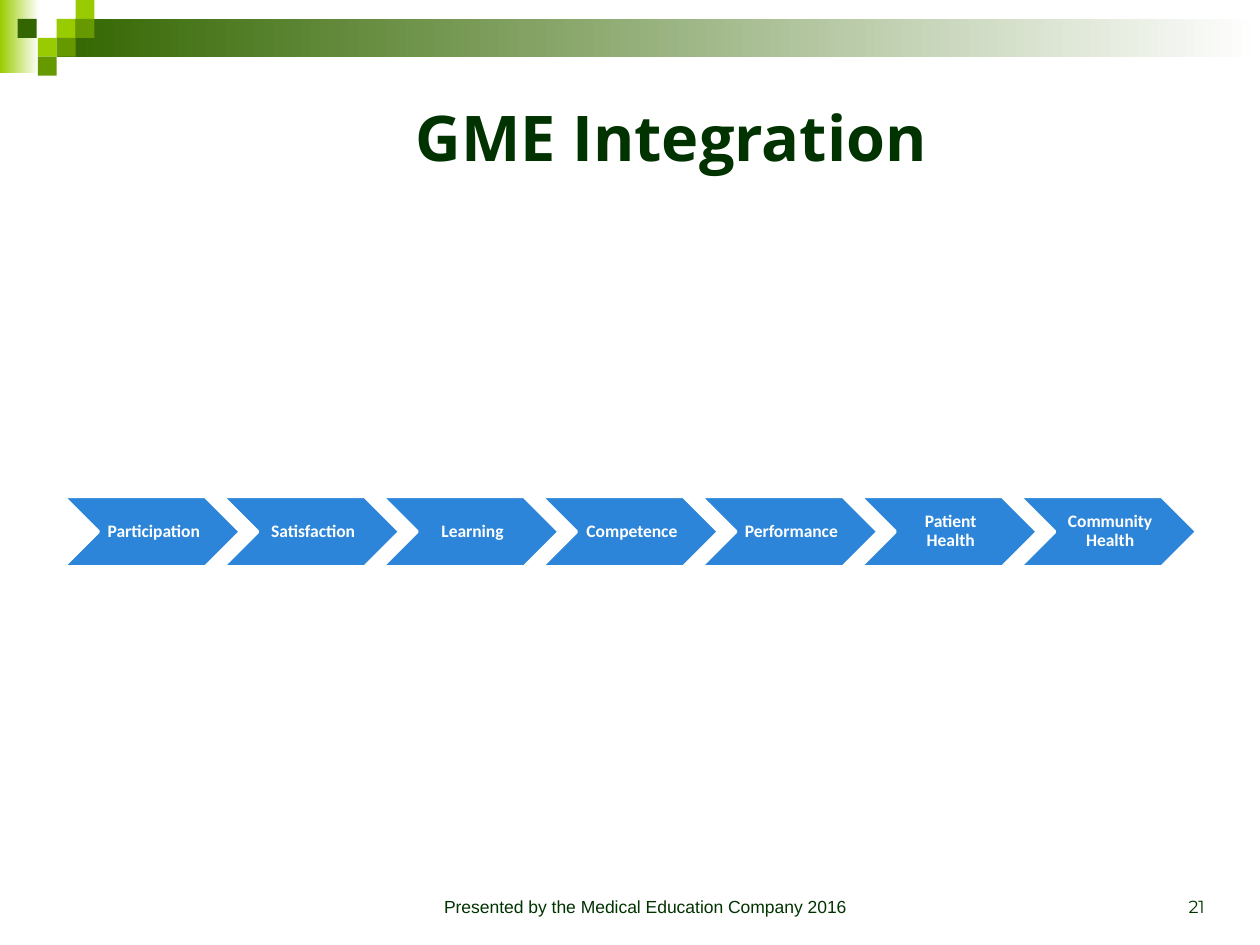
import pptx
import pptx.util
import pptx.dml.color
import pptx.enum.shapes
import pptx.enum.text

Inches = pptx.util.Inches
Pt = pptx.util.Pt
SHAPE = pptx.enum.shapes.MSO_SHAPE
ANCHOR = pptx.enum.text.MSO_ANCHOR
ALIGN = pptx.enum.text.PP_ALIGN

DARK_GREEN = "003300"
WHITE = "FFFFFF"
STAGES = ["Participation", "Satisfaction", "Learning", "Competence",
          "Performance", "Patient Health", "Community Health"]
TILE = 0.15
TILES = [(0.45, 0.15, "99CC00"), (0.6, 0, "99CC00"), (0.6, 0.15, "669900"),
         (0.3, 0.3, "99CC00"), (0.14, 0.15, "336600"),
         (0.45, 0.3, "669900"), (0.3, 0.45, "669900")]


def rgb(value):
    return pptx.dml.color.RGBColor.from_string(value)


def set_all(target, values):
    for key, value in values.items():
        setattr(target, key, value)


def write(shape, text, size, font, color, align, anchor, bold=False):
    set_all(shape.text_frame, {"word_wrap": True, "vertical_anchor": anchor})
    paragraph = shape.text_frame.paragraphs[0]
    paragraph.alignment = align
    run = paragraph.add_run()
    run.text = text
    set_all(run.font, {"size": Pt(size), "name": font, "bold": bold})
    run.font.color.rgb = rgb(color)
    return paragraph


def add_block(slide, preset, box, color):
    block = slide.shapes.add_shape(preset, *map(Inches, box))
    block.shadow.inherit = False
    block.fill.solid()
    block.fill.fore_color.rgb = rgb(color)
    block.line.fill.background()
    return block


def add_fade(slide, box, color):
    fade = add_block(slide, SHAPE.RECTANGLE, box, color)
    fade.fill.gradient()
    fade.fill.gradient_angle = 0
    for stop, shade, position in zip(fade.fill.gradient_stops, (color, WHITE), (0, 1)):
        stop.color.rgb = rgb(shade)
        stop.position = position


def add_banner(slide):
    add_fade(slide, (0, 0, 0.31, 0.58), "99CC00")
    add_fade(slide, (0.45, 0.15, 9.55, 0.3), "336600")
    for left, top, color in TILES:
        add_block(slide, SHAPE.RECTANGLE, (left, top, TILE, TILE), color)


def add_title(slide, text):
    title = slide.shapes.title
    set_all(title, {"left": Inches(0.83), "top": Inches(0.33),
                    "width": Inches(9), "height": Inches(1.5)})
    write(title, text, 36, "Open Sans", DARK_GREEN, ALIGN.CENTER, ANCHOR.MIDDLE, True)


def add_stage(slide, index, text):
    box = (0.5 + index * 1.265, 3.94, 1.41, 0.56)
    stage = add_block(slide, SHAPE.CHEVRON, box, "2C85D8")
    stage.line.color.rgb = rgb(WHITE)
    stage.line.width = Pt(2)
    set_all(stage.text_frame, {"margin_left": Inches(0.04), "margin_right": Inches(0.01),
                               "margin_top": Inches(0.01), "margin_bottom": Inches(0.01)})
    label = write(stage, text, 10, "Calibri", WHITE, ALIGN.CENTER, ANCHOR.MIDDLE, True)
    label.line_spacing = 0.9


def add_footer(slide, box, text, font, align):
    footer = slide.shapes.add_textbox(*map(Inches, box))
    write(footer, text, 10, font, DARK_GREEN, align, ANCHOR.BOTTOM)


def main():
    deck = pptx.Presentation()
    set_all(deck, {"slide_width": Inches(10), "slide_height": Inches(7.5)})
    slide = deck.slides.add_slide(deck.slide_layouts[5])
    add_banner(slide)
    add_title(slide, "GME Integration")
    add_footer(slide, (3.08, 6.83, 4.08, 0.5),
               "Presented by the Medical Education Company 2016", "Arial", ALIGN.CENTER)
    add_footer(slide, (7.33, 6.83, 2.33, 0.5), "21", "Montserrat", ALIGN.RIGHT)
    for index, text in enumerate(STAGES):
        add_stage(slide, index, text)
    deck.save("out.pptx")


if __name__ == "__main__":
    main()
